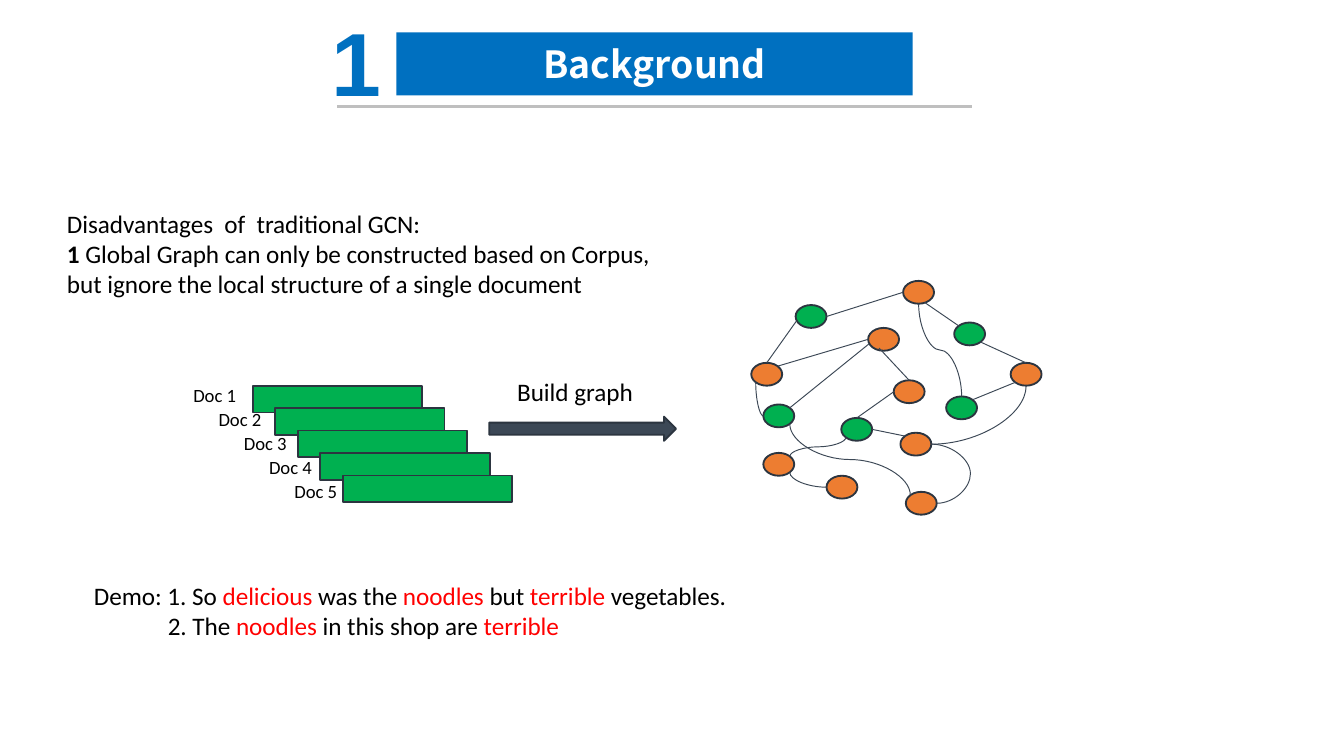
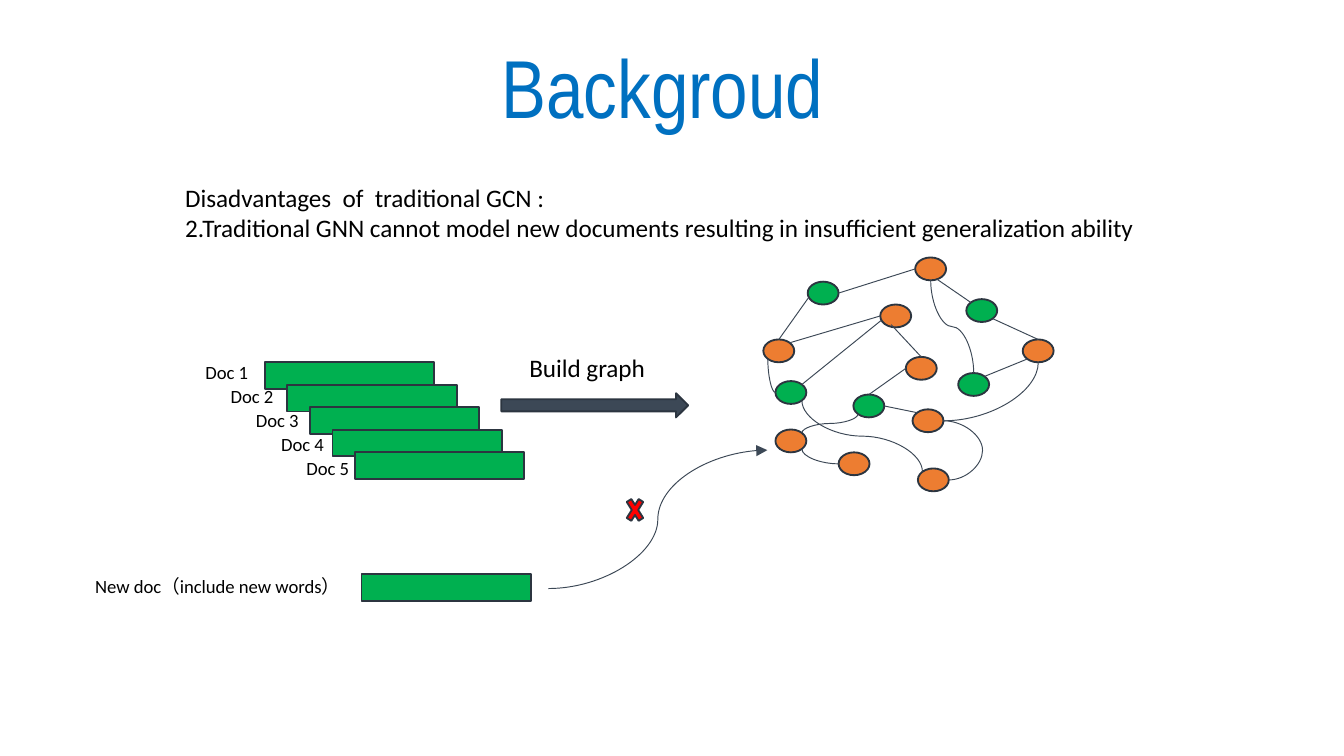
from pptx import Presentation
from pptx.dml.color import RGBColor
from pptx.enum.shapes import MSO_CONNECTOR, MSO_SHAPE
from pptx.enum.text import MSO_ANCHOR, MSO_AUTO_SIZE, PP_ALIGN
from pptx.oxml.ns import qn
from pptx.util import Inches, Pt
from lxml import etree

# Enum members
RECTANGLE, ELLIPSE = MSO_SHAPE.RECTANGLE, MSO_SHAPE.OVAL
RIGHT_ARROW, CROSS = MSO_SHAPE.RIGHT_ARROW, MSO_SHAPE.MATH_MULTIPLY
STRAIGHT, CURVE = MSO_CONNECTOR.STRAIGHT, MSO_CONNECTOR.CURVE
MIDDLE, CENTER = MSO_ANCHOR.MIDDLE, PP_ALIGN.CENTER
FIXED_SIZE, GROW = MSO_AUTO_SIZE.NONE, MSO_AUTO_SIZE.SHAPE_TO_FIT_TEXT

# Colours and fonts
BLUE = RGBColor(0x00, 0x70, 0xC0)
GREEN = RGBColor(0x00, 0xB0, 0x50)
ORANGE = RGBColor(0xED, 0x7D, 0x31)
RED = RGBColor(0xFF, 0x00, 0x00)
SLATE = RGBColor(0x3C, 0x48, 0x56)
OUTLINE = RGBColor(0x2C, 0x35, 0x40)
GRAY = RGBColor(0xBF, 0xBF, 0xBF)
BLACK = RGBColor(0x00, 0x00, 0x00)
WHITE = RGBColor(0xFF, 0xFF, 0xFF)
BODY_FONT = "Calibri"
BODY_SIZE, LABEL_SIZE = 13.5, 10

# Grid of square cells; all lengths below are in columns and rows
COLUMNS, ROWS = 100, 56.25
CELL = Inches(10) / COLUMNS
DOCUMENT_WIDTH, DOCUMENT_HEIGHT = 12.6, 2.0

# Graph: node name -> left, top, colour
NODE_WIDTH, NODE_HEIGHT = 2.3, 1.7
NODES = {
    "a": (55.9, 27.0, ORANGE), "b": (66.5, 28.3, ORANGE),
    "c": (64.6, 24.4, ORANGE), "d": (56.8, 33.7, ORANGE),
    "e": (62.6, 31.1, GREEN), "f": (67.0, 32.2, ORANGE),
    "g": (61.5, 35.4, ORANGE), "h": (67.4, 36.6, ORANGE),
    "i": (56.8, 30.1, GREEN), "j": (70.4, 29.5, GREEN),
    "k": (59.2, 22.7, GREEN), "l": (71.0, 24.0, GREEN),
    "m": (67.2, 20.9, ORANGE), "n": (75.2, 27.0, ORANGE),
}
# Points on a node, as shares of its radii
SITES = {
    "N": (0, -1), "S": (0, 1), "W": (-1, 0), "E": (1, 0),
    "NW": (-0.71, -0.71), "NE": (0.71, -0.71),
    "SW": (-0.71, 0.71), "SE": (0.71, 0.71),
    "WSW": (-0.95, 0.4), "SSE": (0.4, 0.9), "inner": (-0.3, 0.76),
}
STRAIGHT_EDGES = [
    ("a", "NE", "c", "W"), ("b", "N", "c", "inner"), ("i", "NE", "c", "WSW"),
    ("e", "N", "b", "W"), ("e", "E", "f", "NW"), ("k", "E", "m", "W"),
    ("a", "N", "k", "WSW"), ("m", "SSE", "l", "NW"), ("j", "NE", "n", "SW"),
    ("l", "SE", "n", "N"),
]
# Curves that leave vertically: quarter bends and S bends
QUARTER_EDGES = [("a", "SW", "i", "W"), ("d", "SE", "g", "W"), ("n", "S", "f", "E")]
S_EDGES = [("h", "NW", "i", "SE"), ("e", "SW", "d", "NE"), ("j", "N", "m", "S")]
LOOP_EDGE, LOOP_BULGE = ("f", "E", "h", "E"), 2.9


def cells(*values):
    return [round(value * CELL) for value in values]


# Text
def write_runs(paragraph, runs, size, font_name=BODY_FONT):
    """Each run is a text, or a text with its colour and boldness."""
    for item in runs:
        text, color, bold = (item, BLACK, False) if isinstance(item, str) else item
        run = paragraph.add_run()
        run.text = text
        run.font.name, run.font.size = font_name, Pt(size)
        run.font.color.rgb, run.font.bold = color, bold


def add_text(slide, box, paragraphs, size=BODY_SIZE, font_name=BODY_FONT, wrap=True):
    shape = slide.shapes.add_textbox(*cells(*box))
    frame = shape.text_frame
    frame.word_wrap, frame.auto_size = wrap, GROW
    for index, runs in enumerate(paragraphs):
        paragraph = frame.paragraphs[0] if index == 0 else frame.add_paragraph()
        write_runs(paragraph, runs, size, font_name)
    return shape


def set_title(slide, box, text, size, font_name, color, bold=False):
    title = slide.shapes.title
    title.left, title.top, title.width, title.height = cells(*box)
    frame = title.text_frame
    frame.word_wrap, frame.auto_size = True, FIXED_SIZE
    frame.vertical_anchor = MIDDLE
    frame.margin_left = frame.margin_right = Inches(0.07)
    frame.margin_top = frame.margin_bottom = Inches(0.04)
    paragraph = frame.paragraphs[0]
    paragraph.alignment = CENTER
    write_runs(paragraph, [(text, color, bold)], size, font_name)
    return title


# Shapes and lines
def add_block(slide, preset, box, color):
    shape = slide.shapes.add_shape(preset, *cells(*box))
    shape.shadow.inherit = False
    shape.fill.solid()
    shape.fill.fore_color.rgb = color
    shape.line.color.rgb, shape.line.width = OUTLINE, Pt(1)


def add_document(slide, left, top):
    add_block(slide, RECTANGLE, (left, top, DOCUMENT_WIDTH, DOCUMENT_HEIGHT), GREEN)


def add_line(slide, start, end, kind=STRAIGHT, color=SLATE, width=0.5):
    connector = slide.shapes.add_connector(kind, *cells(*start, *end))
    connector.line.color.rgb, connector.line.width = color, Pt(width)
    etree.SubElement(connector._element.spPr, qn("a:effectLst"))
    return connector


def add_vertical_curve(slide, start, end, preset):
    """Turn a curved connector so that it leaves its start up or down."""
    connector = add_line(slide, start, end, CURVE)
    (x1, y1), (x2, y2) = start, end
    width, height = abs(y2 - y1), abs(x2 - x1)
    left, top = (x1 + x2 - width) / 2, (y1 + y2 - height) / 2
    connector.left, connector.top, connector.width, connector.height = cells(
        left, top, width, height)
    down, right = y2 > y1, x2 > x1
    transform = connector._element.spPr.xfrm
    transform.rot = 90 if down and not right else 270
    transform.flipH = down and right
    transform.flipV = not down and not right
    connector._element.spPr.find(qn("a:prstGeom")).set("prst", preset)


def set_bend(connector, share):
    geometry = connector._element.spPr.find(qn("a:prstGeom"))
    guides = geometry.find(qn("a:avLst"))
    if guides is None:
        guides = etree.SubElement(geometry, qn("a:avLst"))
    etree.SubElement(guides, qn("a:gd"), name="adj1", fmla=f"val {round(share * 100000)}")


# Diagram shared by both slides
def add_graph(slide, dx, dy):
    def site(node, name):
        left, top, _ = NODES[node]
        across, down = SITES[name]
        return (left + dx + NODE_WIDTH / 2 * (1 + across),
                top + dy + NODE_HEIGHT / 2 * (1 + down))

    def ends(edge):
        return site(*edge[:2]), site(*edge[2:])

    for left, top, color in NODES.values():
        add_block(slide, ELLIPSE, (left + dx, top + dy, NODE_WIDTH, NODE_HEIGHT), color)
    for edge in STRAIGHT_EDGES:
        add_line(slide, *ends(edge))
    for edge in QUARTER_EDGES:
        add_vertical_curve(slide, *ends(edge), "curvedConnector2")
    for edge in S_EDGES:
        add_vertical_curve(slide, *ends(edge), "curvedConnector3")
    start, end = ends(LOOP_EDGE)
    loop = add_line(slide, start, end, CURVE)
    set_bend(loop, LOOP_BULGE / (end[0] - start[0]))


def add_diagram(slide, dx=0, dy=0):
    for index in range(5):
        add_document(slide, 18.8 + dx + 1.68 * index, 28.7 + dy + 1.67 * index)
    for index in range(5):
        box = (13.4 + dx + 1.88 * index, 28.1 + dy + 1.78 * index, 6.4, 2.7)
        add_text(slide, box, [[f"Doc {index + 1}"]], LABEL_SIZE)
    add_block(slide, RIGHT_ARROW, (36.4 + dx, 31 + dy, 13.9, 1.8), SLATE)
    add_text(slide, (37.5 + dx, 27.5 + dy, 12, 3.3), [["Build graph"]])
    add_graph(slide, dx, dy)


# Slides
def build_local_structure_slide(slide):
    title = set_title(slide, (29.5, 2.4, 38.4, 4.7), "Background", 20,
                      "Noto Sans CJK SC", WHITE, True)
    title.fill.solid()
    title.fill.fore_color.rgb = BLUE
    add_line(slide, (25.1, 7.9), (72.3, 7.9), color=GRAY, width=1.5)
    number = add_text(slide, (23.7, 0, 5.8, 9.1), [[("1", BLUE, True)]], 48, "Arial", False)
    number.text_frame.vertical_anchor = MIDDLE
    add_text(slide, (4, 15, 46.5, 7.8), [
        ["Disadvantages  of  traditional GCN:"],
        [("1 ", BLACK, True), "Global Graph can only be constructed based on Corpus, "
         "but ignore the local structure of a single document"],
    ])
    add_diagram(slide)
    demo = add_text(slide, (6, 42.7, 51.1, 5.6), [
        ["Demo: 1. So ", ("delicious", RED, False), " was the ", ("noodles", RED, False),
         " but ", ("terrible ", RED, False), "vegetables."],
        ["2. The ", ("noodles ", RED, False), "in this shop are ", ("terrible", RED, False)],
    ])
    second_sentence = demo.text_frame.paragraphs[1]
    second_sentence._p.get_or_add_pPr().set("marL", str(Inches(0.55)))


def build_new_document_slide(slide):
    set_title(slide, (29.6, 2.3, 39.4, 8.2), "Backgroud", 44, "Arial Narrow", BLUE)
    add_text(slide, (12.8, 13.1, 73.4, 5.6), [
        ["Disadvantages  of  traditional GCN :"],
        ["2.Traditional GNN cannot model new documents resulting in "
         "insufficient generalization ability"],
    ], wrap=False)
    add_diagram(slide, 0.9, -1.74)
    # New document that cannot join the graph
    add_document(slide, 26.9, 42.7)
    add_text(slide, (6.1, 42.3, 20.3, 2.7), [["New doc（include new words）"]], LABEL_SIZE)
    link = add_line(slide, (40.8, 43.8), (57.1, 33.5), CURVE)
    etree.SubElement(link.line._get_or_add_ln(), qn("a:tailEnd"), type="triangle")
    add_block(slide, CROSS, (46.4, 36.6, 1.7, 2.7), RED)


def main():
    presentation = Presentation()
    presentation.slide_width, presentation.slide_height = cells(COLUMNS, ROWS)
    title_only = presentation.slide_layouts[5]
    for build in (build_local_structure_slide, build_new_document_slide):
        build(presentation.slides.add_slide(title_only))
    presentation.save("out.pptx")


if __name__ == "__main__":
    main()
